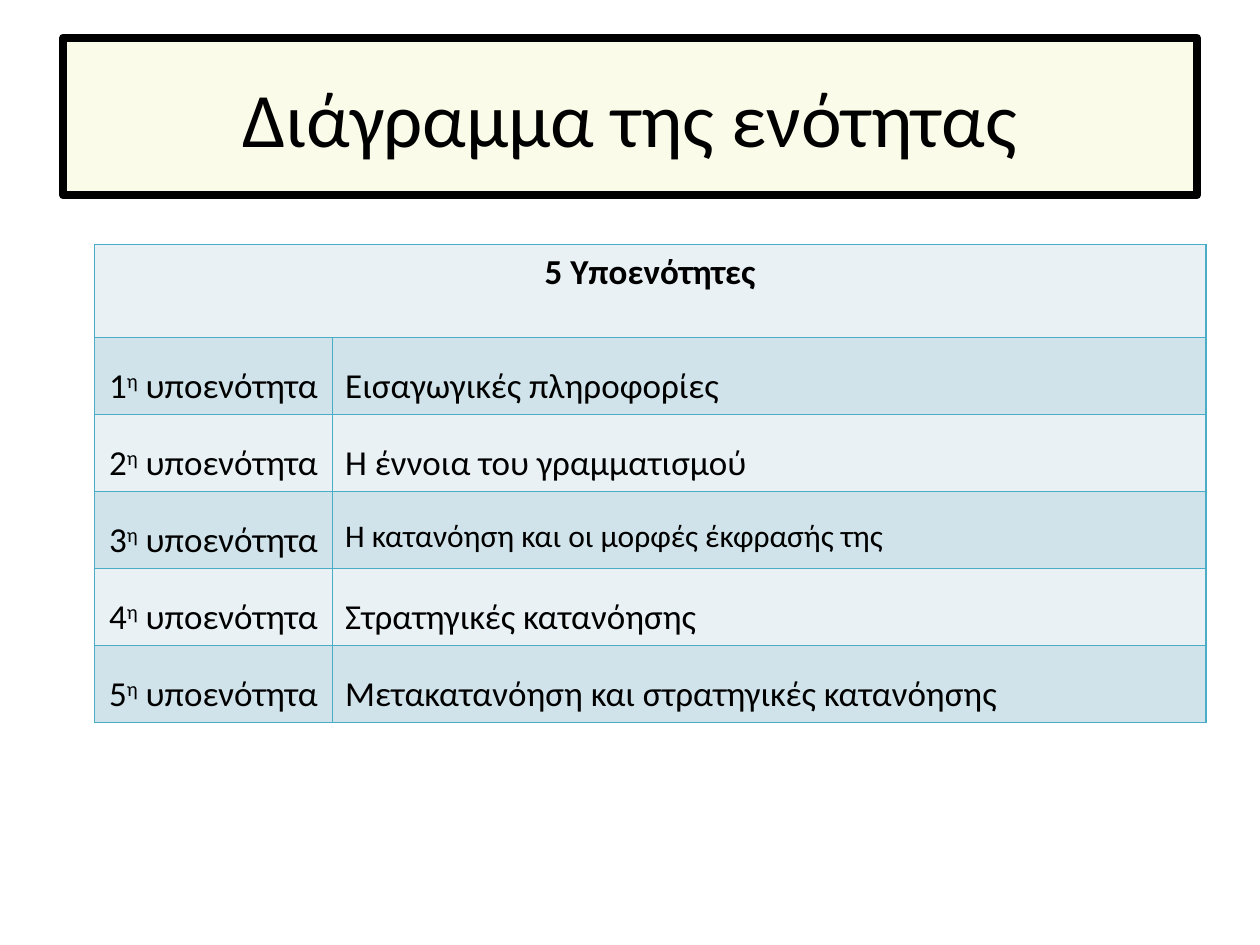
from lxml.etree import SubElement
from pptx import Presentation
from pptx.dml.color import RGBColor
from pptx.enum.shapes import MSO_SHAPE
from pptx.enum.text import MSO_ANCHOR, PP_ALIGN
from pptx.oxml.ns import qn
from pptx.util import Inches, Pt

TITLE = "Διάγραμμα της ενότητας"
HEADER = "5 Υποενότητες"
SUBUNITS = [
    ("Εισαγωγικές πληροφορίες", 20),
    ("Η έννοια του γραμματισμού", 20),
    ("Η κατανόηση και οι μορφές έκφρασής της", 18),
    ("Στρατηγικές κατανόησης", 20),
    ("Μετακατανόηση και στρατηγικές κατανόησης", 20),
]
COLORS = {
    "text": "000000",
    "title": "FBFBE9",
    "light": "E9F1F5",
    "dark": "D0E3EA",
    "border": "4BACC6",
}
FONT = "Calibri"
COL_WIDTHS = [1.89, 6.93]
HEADER_HEIGHT, ROW_HEIGHT = 0.74, 0.61


def rgb(name):
    return RGBColor.from_string(COLORS[name])


def add_run(p, text, size, bold=False, superscript=False):
    r = p.add_run()
    r.text = text
    r.font.name = FONT
    r.font.size = Pt(size)
    r.font.bold = bold
    r.font.color.rgb = rgb("text")
    if superscript:
        r.font._element.set("baseline", "30000")


def style_cell(cell, fill):
    tcPr = cell._tc.get_or_add_tcPr()
    for side in ("a:lnL", "a:lnR", "a:lnT", "a:lnB"):
        ln = SubElement(tcPr, qn(side), w=str(Pt(1)))
        solid = SubElement(ln, qn("a:solidFill"))
        SubElement(solid, qn("a:srgbClr"), val=COLORS["border"])
    cell.fill.solid()
    cell.fill.fore_color.rgb = rgb(fill)


def add_title(s):
    sp = s.shapes.add_shape(MSO_SHAPE.RECTANGLE, Inches(0.5), Inches(0.3), Inches(9), Inches(1.25))
    sp.shadow.inherit = False
    sp.fill.solid()
    sp.fill.fore_color.rgb = rgb("title")
    sp.line.color.rgb = rgb("text")
    sp.line.width = Pt(4.5)
    SubElement(sp.line._get_or_add_ln(), qn("a:round"))
    tf = sp.text_frame
    tf.word_wrap = True
    tf.vertical_anchor = MSO_ANCHOR.MIDDLE
    p = tf.paragraphs[0]
    p.alignment = PP_ALIGN.CENTER
    add_run(p, TITLE, 44)


def add_subunits(s):
    heights = [HEADER_HEIGHT] + [ROW_HEIGHT] * len(SUBUNITS)
    table = s.shapes.add_table(
        len(heights), len(COL_WIDTHS), Inches(0.75), Inches(1.94),
        Inches(sum(COL_WIDTHS)), Inches(sum(heights)),
    ).table
    table.first_row = False
    table.horz_banding = False
    for col, width in zip(table.columns, COL_WIDTHS):
        col.width = Inches(width)
    for i, (row, height) in enumerate(zip(table.rows, heights)):
        row.height = Inches(height)
        for cell in row.cells:
            style_cell(cell, "dark" if i % 2 else "light")

    table.cell(0, 0).merge(table.cell(0, 1))
    p = table.cell(0, 0).text_frame.paragraphs[0]
    p.alignment = PP_ALIGN.CENTER
    add_run(p, HEADER, 20, bold=True)

    for i, (topic, size) in enumerate(SUBUNITS, 1):
        label, text = (table.cell(i, j).text_frame.paragraphs[0] for j in range(2))
        label.alignment, text.alignment = PP_ALIGN.CENTER, PP_ALIGN.JUSTIFY
        label.line_spacing = text.line_spacing = 1.5
        add_run(label, str(i), 20)
        add_run(label, "η", 20, superscript=True)
        add_run(label, " υποενότητα", 20)
        add_run(text, topic, size)


def main():
    prs = Presentation()
    prs.slide_width, prs.slide_height = Inches(10), Inches(7.5)
    s = prs.slides.add_slide(prs.slide_layouts[6])
    add_title(s)
    add_subunits(s)
    prs.save("out.pptx")


if __name__ == "__main__":
    main()
